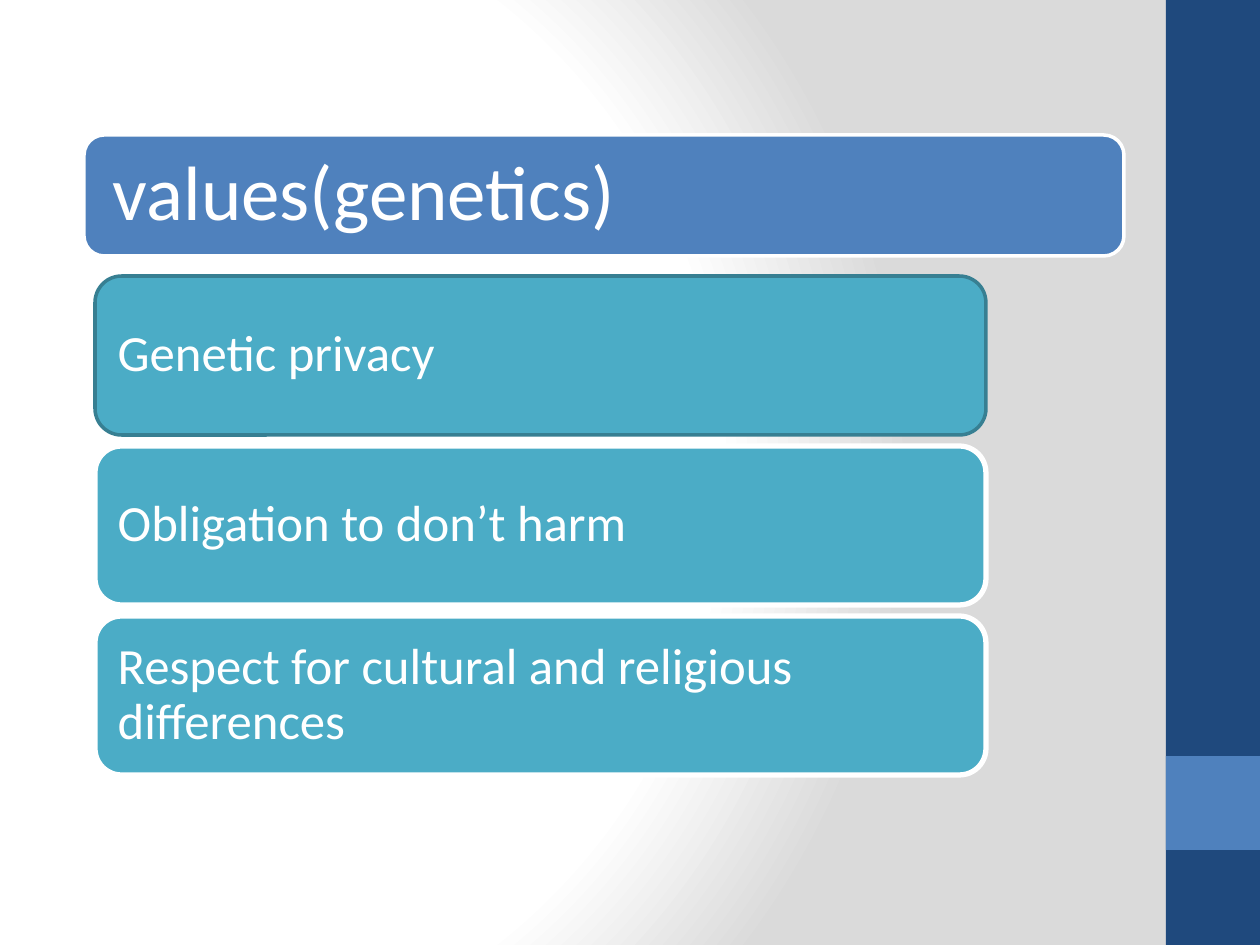
from dataclasses import dataclass

from lxml import etree
from pptx import Presentation
from pptx import util as u
from pptx.dml.color import RGBColor
from pptx.enum import shapes, text
from pptx.oxml import parse_xml
from pptx.oxml.ns import nsdecls, qn

EMU_PER_PX = 914400 / 126
PAGE_WIDTH, PAGE_HEIGHT = 1260, 945
FONT = "Calibri"
COLORS = {
    "white": "FFFFFF",
    "grey": "DADADA",
    "navy": "1F497D",
    "blue": "4F81BD",
    "teal": "4BACC6",
    "dark_teal": "377F92",
}


@dataclass(frozen=True)
class Box:
    left: int
    top: int
    width: int
    height: int


@dataclass(frozen=True)
class Card:
    box: Box
    wording: str
    fill: str
    line: str
    line_pt: int
    size_pt: int
    inset: int


def px(length: int) -> u.Emu:
    return u.Emu(round(length * EMU_PER_PX))


def color(name: str) -> RGBColor:
    return RGBColor.from_string(COLORS[name])


def set_glow_background(page) -> None:
    """Fill the page with a circular gradient from white to grey."""
    page.background.fill.solid()
    solid = next(page.element.iter(qn("a:solidFill")))
    gradient = parse_xml(f'<a:gradFill {nsdecls("a")} rotWithShape="1"/>')
    stops = etree.SubElement(gradient, qn("a:gsLst"))
    for percent, name in ((0, "white"), (75, "white"), (100, "grey")):
        stop = etree.SubElement(stops, qn("a:gs"), pos=str(percent * 1000))
        etree.SubElement(stop, qn("a:srgbClr"), val=COLORS[name])
    circle = etree.SubElement(gradient, qn("a:path"), path="circle")
    etree.SubElement(circle, qn("a:fillToRect"),
                     l="20000", t="50000", r="100000", b="50000")
    solid.getparent().replace(solid, gradient)


def add_block(page, kind: shapes.MSO_SHAPE, box: Box, fill: str):
    block = page.shapes.add_shape(
        kind, px(box.left), px(box.top), px(box.width), px(box.height))
    block.shadow.inherit = False
    block.fill.solid()
    block.fill.fore_color.rgb = color(fill)
    block.line.fill.background()
    return block


def add_card(page, card: Card) -> None:
    block = add_block(page, shapes.MSO_SHAPE.ROUNDED_RECTANGLE, card.box, card.fill)
    block.line.color.rgb = color(card.line)
    block.line.width = u.Pt(card.line_pt)
    frame = block.text_frame
    frame.text = card.wording
    frame.word_wrap = True
    frame.vertical_anchor = text.MSO_ANCHOR.MIDDLE
    frame.margin_left = frame.margin_right = px(card.inset)
    frame.margin_top = frame.margin_bottom = px(card.inset)
    para = frame.paragraphs[0]
    para.alignment = text.PP_ALIGN.LEFT
    para.line_spacing = 0.9
    span = para.runs[0]
    span.font.name = FONT
    span.font.size = u.Pt(card.size_pt)
    span.font.color.rgb = color("white")


VALUES_TOP, VALUES_STEP = 276, 170
VALUES = (
    ("Genetic privacy", "dark_teal", 2),
    ("Obligation to don’t harm", "white", 3),
    ("Respect for cultural and religious differences", "white", 3),
)
SIDE_BANDS = (
    (Box(1166, 0, 94, PAGE_HEIGHT), "navy"),
    (Box(1166, 756, 94, 94), "blue"),
)


def main() -> None:
    deck = Presentation()
    deck.slide_width, deck.slide_height = px(PAGE_WIDTH), px(PAGE_HEIGHT)
    page = deck.slides.add_slide(deck.slide_layouts[6])
    set_glow_background(page)
    for box, fill in SIDE_BANDS:
        add_block(page, shapes.MSO_SHAPE.RECTANGLE, box, fill)
    add_card(page, Card(Box(84, 135, 1040, 121), "values(genetics)",
                        "blue", "white", 2, 44, 23))
    for row, (wording, line, line_pt) in enumerate(VALUES):
        box = Box(95, VALUES_TOP + row * VALUES_STEP, 891, 159)
        add_card(page, Card(box, wording, "teal", line, line_pt, 29, 15))
    deck.save("out.pptx")


if __name__ == "__main__":
    main()
